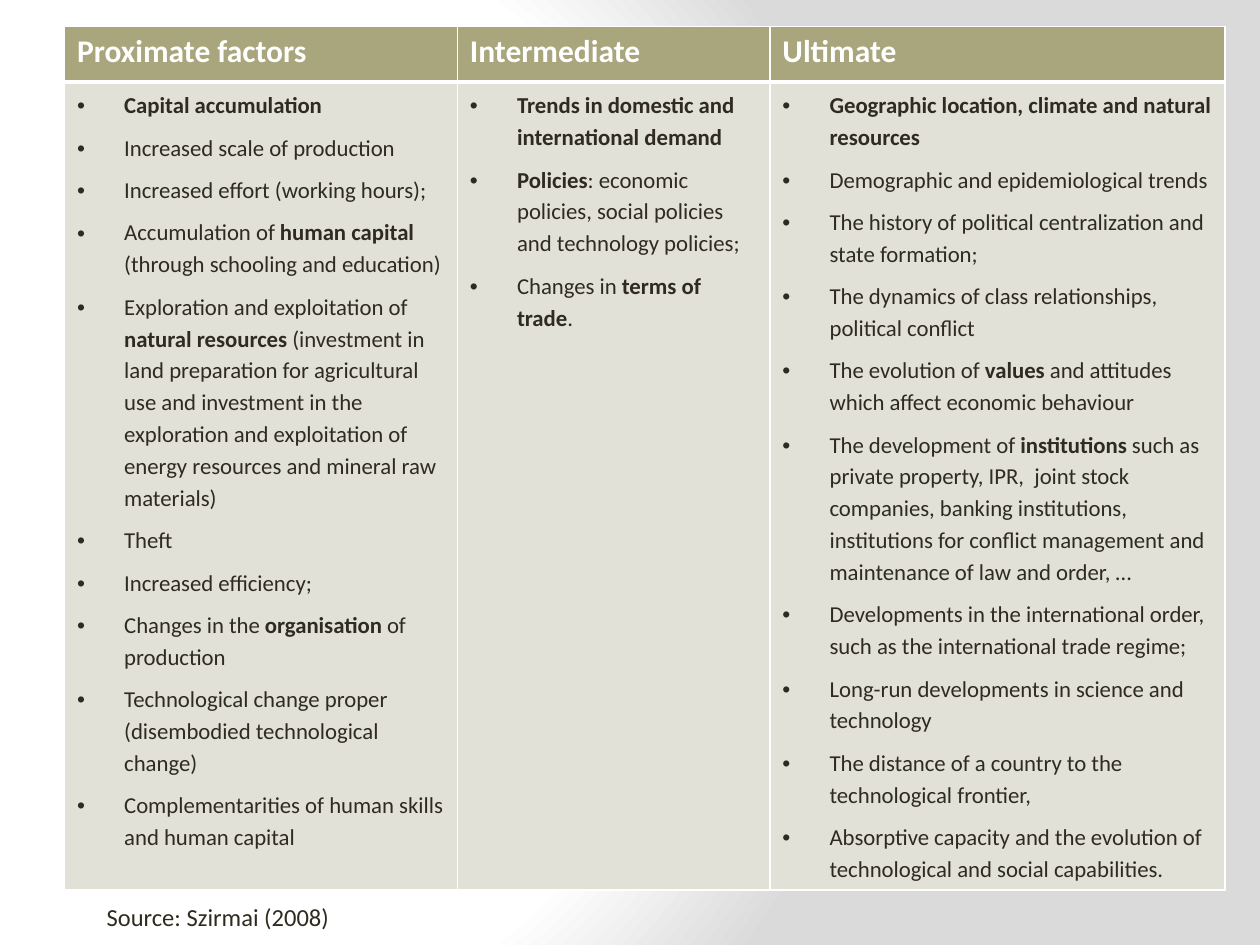
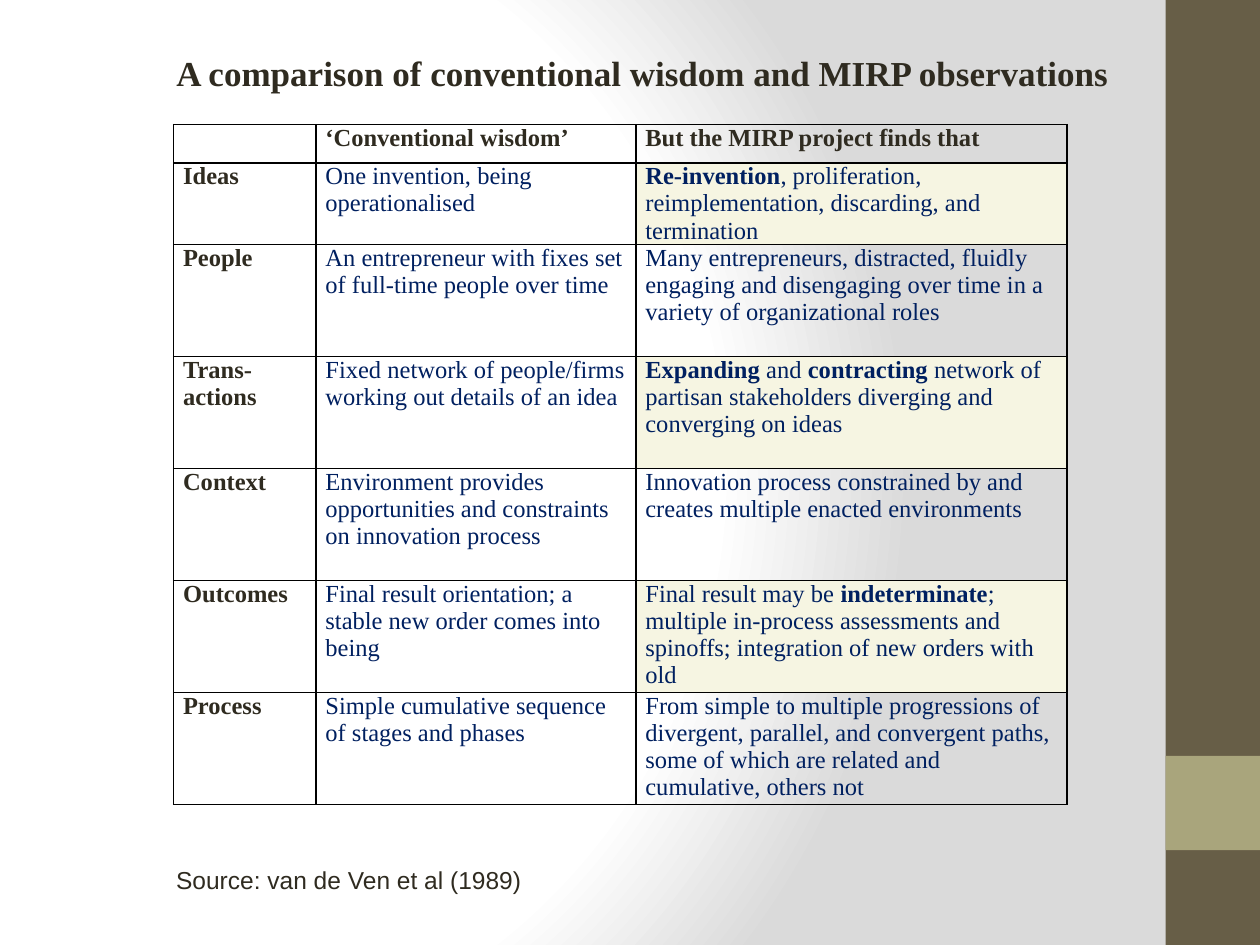
"""Build two slides on growth factors and innovation findings."""
import pptx
import pptx.dml.color
import pptx.enum.shapes
import pptx.enum.text
import pptx.oxml
import pptx.oxml.ns
import pptx.util
from pptx.util import Cm

COLORS = {
    "ink": "2F2B20",
    "navy": "002060",
    "white": "FFFFFF",
    "black": "000000",
    "grey": "DADADA",
    "brown": "675E47",
    "olive": "A9A57C",
    "sand": "E2E1D7",
    "cream": "F6F5E2",
}
SANS, SERIF, PLAIN = "Calibri", "Times New Roman", "Arial"
MAIN = "http://schemas.openxmlformats.org/drawingml/2006/main"

FACTORS = {
    "Proximate factors": [
        "**Capital accumulation**",
        "Increased scale of production",
        "Increased effort (working hours);",
        "Accumulation of **human capital **(through schooling and education)",
        "Exploration and exploitation of **natural resources **(investment in land preparation "
        "for agricultural use and investment in the exploration and exploitation of energy "
        "resources and mineral raw materials)",
        "Theft",
        "Increased efficiency;",
        "Changes in the **organisation** of production",
        "Technological change proper (disembodied technological change)",
        "Complementarities of human skills and human capital",
    ],
    "Intermediate": [
        "**Trends in domestic and international demand**",
        "**Policies**: economic policies, social policies and technology policies;",
        "Changes in **terms of trade**.",
    ],
    "Ultimate": [
        "**Geographic location, climate and natural resources**",
        "Demographic and epidemiological trends",
        "The history of political centralization and state formation;",
        "The dynamics of class relationships, political conflict",
        "The evolution of **values** and attitudes which affect economic behaviour",
        "The development of **institutions** such as private property, IPR,  joint stock companies, "
        "banking institutions, institutions for conflict management and maintenance of law and "
        "order, …",
        "Developments in the international order, such as the international trade regime;",
        "Long-run developments in science and technology",
        "The distance of a country to the technological frontier,",
        "Absorptive capacity and the evolution of technological and social capabilities.",
    ],
}

COMPARISON = [
    ("", "**‘Conventional wisdom’**", "**But the MIRP project finds that**"),
    ("**Ideas**", "One invention, being operationalised",
     "**Re-invention**, proliferation, reimplementation, discarding, and termination"),
    ("**People**", "An entrepreneur with fixes set of full-time people over time",
     "Many entrepreneurs, distracted, fluidly engaging and disengaging over time in a variety "
     "of organizational roles"),
    ("**Trans-actions**", "Fixed network of people/firms working out details of an idea",
     "**Expanding** and **contracting** network of partisan stakeholders diverging and "
     "converging on ideas"),
    ("**Context**", "Environment provides opportunities and constraints on innovation process",
     "Innovation process constrained by and creates multiple enacted environments"),
    ("**Outcomes**", "Final result orientation; a stable new order comes into being",
     "Final result may be **indeterminate**; multiple in-process assessments and spinoffs; "
     "integration of new orders with old"),
    ("**Process**", "Simple cumulative sequence of stages and phases",
     "From simple to multiple progressions of divergent, parallel, and convergent paths, some "
     "of which are related and cumulative, others not"),
]


def rgb(name):
    return pptx.dml.color.RGBColor.from_string(COLORS[name])


def write_spans(para, marked_text, font, size, color):
    for index, piece in enumerate(marked_text.split("**")):
        if piece:
            span = para.add_run()
            span.text = piece
            span.font.name = font
            span.font.size = pptx.util.Pt(size)
            span.font.bold = index % 2 == 1
            span.font.color.rgb = rgb(color)


def add_bullet(para):
    para.line_spacing = 1.15
    para.space_after = pptx.util.Pt(6)
    properties = para._p.get_or_add_pPr()
    properties.set("marL", str(Cm(0.95)))
    properties.set("indent", str(-Cm(0.95)))
    for markup in ('buFont xmlns:a="%s" typeface="Arial"', 'buChar xmlns:a="%s" char="•"'):
        properties.append(pptx.oxml.parse_xml(f"<a:{markup % MAIN}/>"))


def style_cell(cell, fill, border, top=1, bottom=1):
    properties = cell._tc.get_or_add_tcPr()
    for side, points in zip("LRTB", (1, 1, top, bottom)):
        properties.append(pptx.oxml.parse_xml(
            f'<a:ln{side} xmlns:a="{MAIN}" w="{pptx.util.Pt(points)}"><a:solidFill>'
            f'<a:srgbClr val="{COLORS[border]}"/></a:solidFill></a:ln{side}>'))
    if fill:
        cell.fill.solid()
        cell.fill.fore_color.rgb = rgb(fill)
    else:
        cell.fill.background()


def add_grid(page, left, top, widths, heights):
    frame = page.shapes.add_table(len(heights), len(widths), Cm(left), Cm(top),
                                  Cm(sum(widths)), Cm(sum(heights)))
    grid = frame.table
    grid.first_row = grid.horz_banding = False
    for column, width in zip(grid.columns, widths):
        column.width = Cm(width)
    for row, height in zip(grid.rows, heights):
        row.height = Cm(height)
    return grid


def add_source(page, left, top, width, text, font):
    box = page.shapes.add_textbox(Cm(left), Cm(top), Cm(width), Cm(0.86))
    box.text_frame.word_wrap = False
    write_spans(box.text_frame.paragraphs[0], text, font, 14, "ink")


def add_band(page, top, height, color):
    band = page.shapes.add_shape(pptx.enum.shapes.MSO_SHAPE.RECTANGLE,
                                 Cm(23.5), Cm(top), Cm(1.9), Cm(height))
    band.shadow.inherit = False
    band.fill.solid()
    band.fill.fore_color.rgb = rgb(color)
    band.line.fill.background()


def set_title(page, text):
    title = page.shapes.title
    title.left, title.top, title.width, title.height = Cm(3.3), Cm(0.91), Cm(20.8), Cm(1.12)
    frame = title.text_frame
    frame.word_wrap = True
    frame.auto_size = pptx.enum.text.MSO_AUTO_SIZE.NONE
    frame.vertical_anchor = pptx.enum.text.MSO_ANCHOR.TOP
    para = frame.paragraphs[0]
    para.alignment = pptx.enum.text.PP_ALIGN.LEFT
    write_spans(para, f"**{text}**", SERIF, 20, "ink")


def set_background(master):
    master.background.fill.solid()
    solid = master.element.find(".//" + pptx.oxml.ns.qn("p:bgPr"))[0]
    stops = "".join(f'<a:gs pos="{place * 1000}"><a:srgbClr val="{COLORS[color]}"/></a:gs>'
                    for place, color in ((0, "white"), (75, "white"), (100, "grey")))
    solid.getparent().replace(solid, pptx.oxml.parse_xml(
        f'<a:gradFill xmlns:a="{MAIN}" rotWithShape="1"><a:gsLst>{stops}</a:gsLst>'
        '<a:path path="circle"><a:fillToRect l="20000" t="50000" r="100000" b="50000"/>'
        '</a:path></a:gradFill>'))


def build_factors(page):
    grid = add_grid(page, 1.3, 0.53, (7.92, 6.3, 9.17), (1.12, 16.08))
    for column, (heading, factors) in enumerate(FACTORS.items()):
        header, body = grid.cell(0, column), grid.cell(1, column)
        style_cell(header, "olive", "white", bottom=3)
        style_cell(body, "sand", "white", top=3)
        write_spans(header.text_frame.paragraphs[0], f"**{heading}**", SANS, 18, "white")
        frame = body.text_frame
        for index, factor in enumerate(factors):
            para = frame.add_paragraph() if index else frame.paragraphs[0]
            add_bullet(para)
            write_spans(para, factor, SANS, 13, "ink")
    add_source(page, 1.9, 18.06, 5.28, "Source: Szirmai (2008)", SANS)


def build_comparison(page):
    add_band(page, 0, 19.05, "brown")
    add_band(page, 15.24, 1.9, "olive")
    set_title(page, "A comparison of conventional wisdom and MIRP observations")
    grid = add_grid(page, 3.5, 2.51, (2.87, 6.45, 8.69), [0.76, 1.5] + [2.26] * 5)
    for row, texts in enumerate(COMPARISON):
        for column, text in enumerate(texts):
            cell = grid.cell(row, column)
            cell.margin_left = cell.margin_right = Cm(0.19)
            cell.margin_top = cell.margin_bottom = 0
            style_cell(cell, "cream" if column == 2 and row % 2 else None, "black")
            color = "navy" if row and column else "ink"
            write_spans(cell.text_frame.paragraphs[0], text, SERIF, 14, color)
    add_source(page, 3.3, 17.32, 7.49, "Source: van de Ven et al (1989)", PLAIN)


def main():
    deck = pptx.Presentation()
    deck.slide_width, deck.slide_height = Cm(25.4), Cm(19.05)
    set_background(deck.slide_master)
    layouts = deck.slide_layouts
    build_factors(deck.slides.add_slide(layouts.get_by_name("Blank")))
    build_comparison(deck.slides.add_slide(layouts.get_by_name("Title Only")))
    deck.save("out.pptx")


if __name__ == "__main__":
    main()
